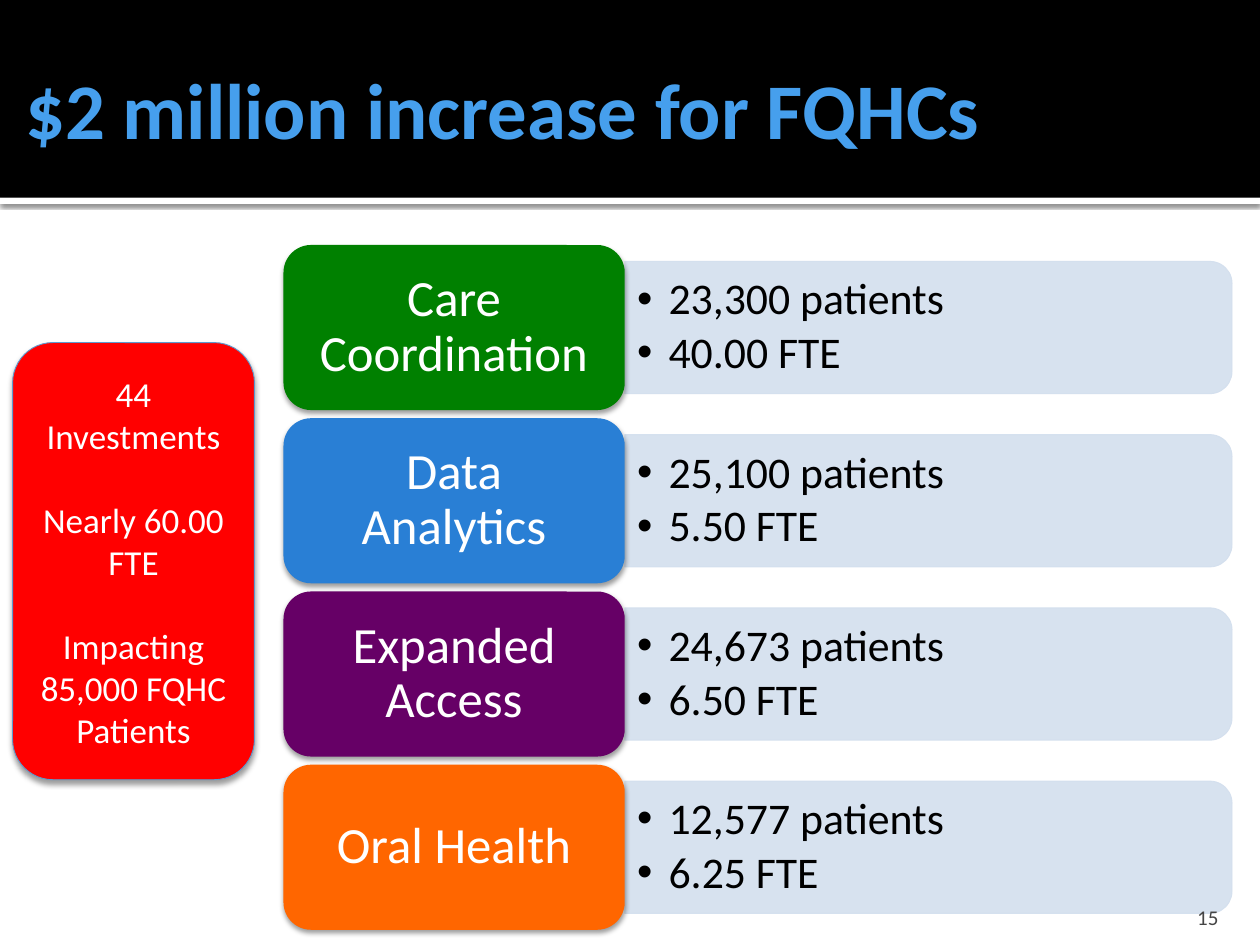
import pptx
import pptx.util
import pptx.dml.color
import pptx.enum.shapes
import pptx.enum.text
import pptx.oxml
import pptx.oxml.ns

Pt = pptx.util.Pt
Shape = pptx.enum.shapes.MSO_SHAPE
Align = pptx.enum.text.PP_ALIGN
Anchor = pptx.enum.text.MSO_ANCHOR

TITLE = "$2 million increase for FQHCs"
SUMMARY = ["44 Investments", "Nearly 60.00 FTE", "Impacting 85,000 FQHC Patients"]
PROGRAMS = [
    ("Care Coordination", "008000", ["23,300 patients", "40.00 FTE"]),
    ("Data Analytics", "297FD5", ["25,100 patients", "5.50 FTE"]),
    ("Expanded Access", "660066", ["24,673 patients", "6.50 FTE"]),
    ("Oral Health", "FF6600", ["12,577 patients", "6.25 FTE"]),
]
PAGE_NUMBER = "15"

ROW_TOP, ROW_PITCH = 140, 99
TILE_LEFT, TILE_WIDTH, TILE_HEIGHT = 162, 195, 94.3
PANEL_WIDTH, PANEL_HEIGHT = 347, 75.6
PANEL_LEFT = TILE_LEFT + TILE_WIDTH
BAND_SHADOW = dict(blur=2.5, distance=0.8, opacity=60)
TILE_SHADOW = dict(blur=3.1, distance=2, opacity=38)


def color(value):
    return pptx.dml.color.RGBColor.from_string(value)


def drawing_xml(body, tag, attributes=""):
    return pptx.oxml.parse_xml(
        f"<a:{tag} {pptx.oxml.ns.nsdecls('a')} {attributes}>{body}</a:{tag}>")


def add_shadow(shape, blur, distance, opacity):
    """Give the shape a black shadow that falls straight down."""
    effects = shape.element.spPr.find(pptx.oxml.ns.qn("a:effectLst"))
    effects.append(drawing_xml(
        f'<a:srgbClr val="000000"><a:alpha val="{opacity * 1000}"/></a:srgbClr>',
        "outerShdw",
        f'blurRad="{Pt(blur)}" dist="{Pt(distance)}" dir="5400000" rotWithShape="0"'))


def add_box(slide, kind, frame, fill, line=None, shadow=None):
    shape = slide.shapes.add_shape(kind, *map(Pt, frame))
    shape.shadow.inherit = False
    shape.fill.solid()
    shape.fill.fore_color.rgb = color(fill)
    if line:
        shape.line.color.rgb = color(line)
        shape.line.width = Pt(0.5)
    else:
        shape.line.fill.background()
    if shadow:
        add_shadow(shape, **shadow)
    return shape


def write_text(shape, lines, size, text_color, anchor=Anchor.MIDDLE, margins=(7.2, 3.6, 7.2, 3.6),
               bullets=False, bold=False, gap=0, **paragraph_format):
    """Fill the shape with one paragraph per line; gap is the space between paragraphs."""
    text_frame = shape.text_frame
    text_frame.word_wrap = True
    text_frame.auto_size = pptx.enum.text.MSO_AUTO_SIZE.NONE
    text_frame.vertical_anchor = anchor
    for side, margin in zip(("left", "top", "right", "bottom"), margins):
        setattr(text_frame, f"margin_{side}", Pt(margin))
    for index, line in enumerate(lines):
        paragraph = text_frame.paragraphs[0] if index == 0 else text_frame.add_paragraph()
        paragraph.text = line
        for name, value in paragraph_format.items():
            setattr(paragraph, name, value)
        if index:
            paragraph.space_before = Pt(gap)
        if bullets:
            properties = paragraph._p.get_or_add_pPr()
            properties.set("marL", str(Pt(18)))
            properties.set("indent", str(Pt(-18)))
            properties.append(drawing_xml("", "buFont", 'typeface="Arial"'))
            properties.append(drawing_xml("", "buChar", 'char="•"'))
        font = paragraph.runs[0].font
        for name, value in dict(name="Calibri", size=Pt(size), bold=bold).items():
            setattr(font, name, value)
        font.color.rgb = color(text_color)


def add_program(slide, row, name, fill, facts):
    top = ROW_TOP + row * ROW_PITCH
    middle = top + TILE_HEIGHT / 2
    center = PANEL_LEFT + PANEL_WIDTH / 2
    panel = add_box(slide, Shape.ROUND_2_SAME_RECTANGLE,
                    (center - PANEL_HEIGHT / 2, middle - PANEL_WIDTH / 2,
                     PANEL_HEIGHT, PANEL_WIDTH), "D3DFEE", line="D3DFEE")
    panel.rotation = 90
    for fill_color in panel.element.spPr.iter(pptx.oxml.ns.qn("a:srgbClr")):
        fill_color.append(drawing_xml("", "alpha", 'val="90000"'))

    fact_box = slide.shapes.add_textbox(*map(Pt, (PANEL_LEFT, middle - 34.2, 343.4, 68.4)))
    write_text(fact_box, facts, 25, "000000", bullets=True, gap=3.75,
               level=1, line_spacing=0.9)

    tile = add_box(slide, Shape.ROUNDED_RECTANGLE,
                   (TILE_LEFT, top, TILE_WIDTH, TILE_HEIGHT), fill, shadow=TILE_SHADOW)
    write_text(tile, [name], 29, "FFFFFF", margins=(13, 9, 13, 9),
               alignment=Align.CENTER, line_spacing=0.9)


def main():
    presentation = pptx.Presentation()
    presentation.slide_width, presentation.slide_height = Pt(720), Pt(540)
    slide = presentation.slides.add_slide(presentation.slide_layouts[5])

    add_box(slide, Shape.RECTANGLE, (0, 113, 720, 3.6), "FFFFFF", shadow=BAND_SHADOW)
    add_box(slide, Shape.RECTANGLE, (0, 0, 720, 113), "000000")

    title = slide.shapes.title
    frame = dict(left=7.2, top=12.2, width=676.8, height=98.6)
    for name, value in frame.items():
        setattr(title, name, Pt(value))
    write_text(title, [TITLE], 45, "469FED", margins=(7.2, 3.6, 3.6, 3.6),
               bold=True, alignment=Align.LEFT)
    title.element.getparent().append(title.element)  # in front of the header band

    for row, program in enumerate(PROGRAMS):
        add_program(slide, row, *program)

    number_box = slide.shapes.add_textbox(*map(Pt, (645.8, 509.8, 57.6, 21.6)))
    write_text(number_box, [PAGE_NUMBER], 12, "454545", anchor=Anchor.BOTTOM,
               margins=(7.2, 3.6, 7.2, 0), alignment=Align.RIGHT)

    summary = add_box(slide, Shape.ROUNDED_RECTANGLE, (7.2, 195.8, 138.2, 249.8),
                      "FF0000", line="5D9ACF", shadow=TILE_SHADOW)
    write_text(summary, SUMMARY, 20, "FFFFFF", gap=24, alignment=Align.CENTER)

    presentation.save("out.pptx")


if __name__ == "__main__":
    main()
